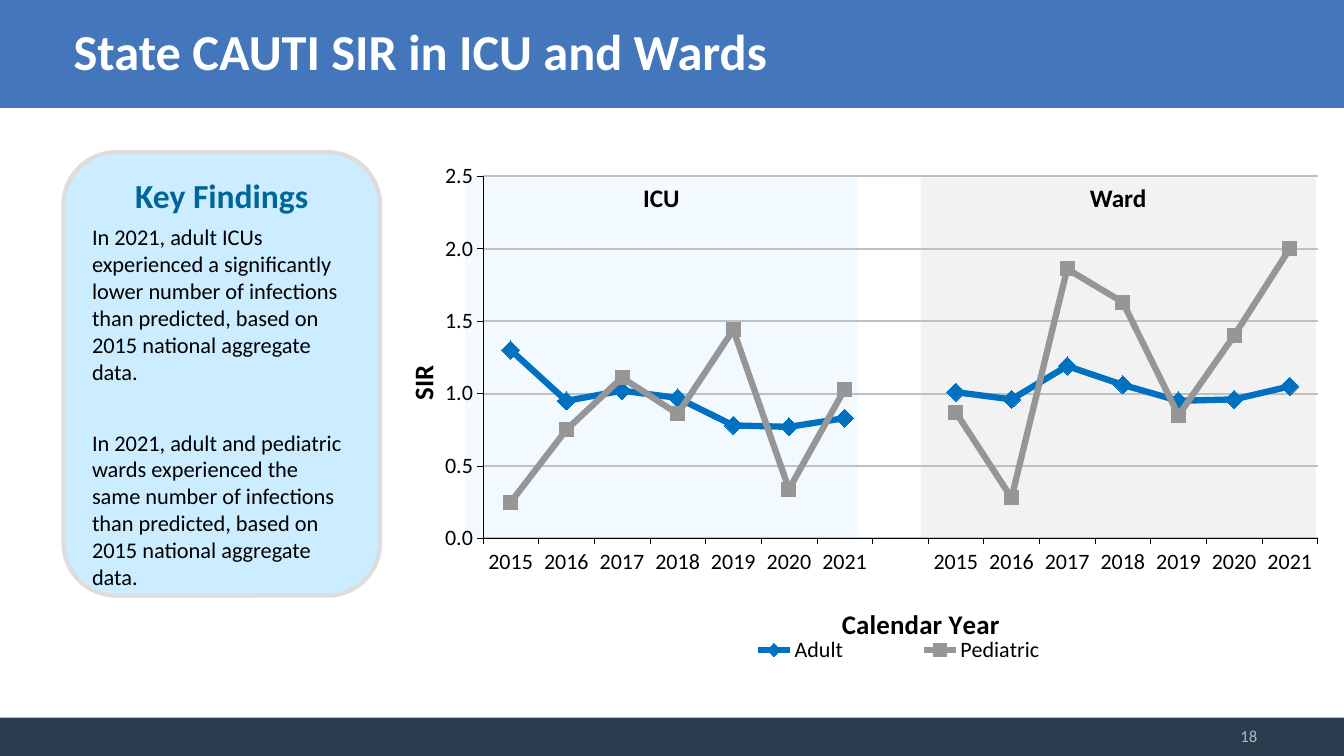
from dataclasses import dataclass
from typing import Any

from lxml import etree
from pptx import Presentation
from pptx.chart.data import CategoryChartData
from pptx.dml.color import RGBColor
from pptx.enum.chart import XL_CHART_TYPE, XL_LEGEND_POSITION, XL_MARKER_STYLE, XL_TICK_MARK
from pptx.enum.shapes import MSO_SHAPE
from pptx.enum.text import MSO_ANCHOR, PP_ALIGN
from pptx.oxml.ns import qn
from pptx.util import Inches, Pt

LINE_MARKERS = XL_CHART_TYPE.LINE_MARKERS
BOTTOM = XL_LEGEND_POSITION.BOTTOM
DIAMOND, SQUARE = XL_MARKER_STYLE.DIAMOND, XL_MARKER_STYLE.SQUARE
OUTSIDE, NO_TICK = XL_TICK_MARK.OUTSIDE, XL_TICK_MARK.NONE
RECTANGLE, ROUNDED = MSO_SHAPE.RECTANGLE, MSO_SHAPE.ROUNDED_RECTANGLE
TOP, MIDDLE = MSO_ANCHOR.TOP, MSO_ANCHOR.MIDDLE
LEFT, CENTER, RIGHT = PP_ALIGN.LEFT, PP_ALIGN.CENTER, PP_ALIGN.RIGHT

FONT = "Calibri"
COLORS = {
    "header": "4376BB", "footer": "2A3C4E", "white": "FFFFFF", "black": "000000",
    "card": "CCECFF", "card_line": "DDDDDD", "heading": "006699", "number": "B5B5B5",
    "ward": "F2F2F2", "icu": "F3FAFF", "grid": "C0C0C0",
    "adult": "0070C0", "pediatric": "969696",
}


@dataclass
class Panel:
    box: tuple[float, float, float, float]
    fill: str
    label: str = ""
    kind: Any = RECTANGLE


@dataclass
class Line:
    text: str
    size: float
    color: str = "black"
    bold: bool = False
    align: Any = LEFT
    spacing: dict[str, Any] | None = None


@dataclass
class Series:
    name: str
    color: str
    marker: Any
    marker_size: int
    values: list[float | None]


BANDS = [Panel((0, 0, 13.33, 1.07), "header"), Panel((0, 7.12, 13.33, 0.38), "footer")]
CARD = Panel((0.63, 1.51, 3.14, 4.4), "card", kind=ROUNDED)
REGIONS = [
    Panel((9.13, 1.76, 3.92, 3.59), "ward", "Ward"),
    Panel((4.61, 1.76, 3.9, 3.59), "icu", "ICU"),
]
AFTER = {"space_after": Pt(6)}
FINDINGS = [
    Line("Key Findings", 24, "heading", True, CENTER, AFTER),
    Line("In 2021, adult ICUs experienced a significantly lower number of infections "
         "than predicted, based on 2015 national aggregate data.", 16, spacing=AFTER),
    Line("In 2021, adult and pediatric wards experienced the same number of infections "
         "than predicted, based on 2015 national aggregate data.", 16,
         spacing={"space_before": Pt(25.5), **AFTER}),
]
YEARS = [str(year) for year in range(2015, 2022)]
SERIES = [
    Series("Adult", "adult", DIAMOND, 13,
           [1.3, 0.95, 1.02, 0.97, 0.78, 0.77, 0.83, None,
            1.01, 0.96, 1.19, 1.06, 0.95, 0.96, 1.05]),
    Series("Pediatric", "pediatric", SQUARE, 10,
           [0.25, 0.75, 1.11, 0.86, 1.44, 0.34, 1.03, None,
            0.87, 0.28, 1.86, 1.63, 0.85, 1.4, 2]),
]


def rgb(name: str) -> RGBColor:
    return RGBColor.from_string(COLORS[name])


def set_all(target: Any, values: dict[str, Any]) -> None:
    for name, value in values.items():
        setattr(target, name, value)


def set_font(font: Any, size: float, color: str = "black", bold: bool = False) -> None:
    set_all(font, {"name": FONT, "size": Pt(size), "bold": bold})
    font.color.rgb = rgb(color)


def set_line(line: Any, color: str, width: float) -> None:
    line.color.rgb = rgb(color)
    line.width = Pt(width)


def write(shape: Any, lines: list[Line], anchor: Any = TOP) -> None:
    frame = shape.text_frame
    set_all(frame, {"word_wrap": True, "vertical_anchor": anchor})
    for index, line in enumerate(lines):
        paragraph = frame.add_paragraph() if index else frame.paragraphs[0]
        set_all(paragraph, {"alignment": line.align, **(line.spacing or {})})
        run = paragraph.add_run()
        run.text = line.text
        set_font(run.font, line.size, line.color, line.bold)


def add_panel(slide: Any, panel: Panel) -> Any:
    shape = slide.shapes.add_shape(panel.kind, *map(Inches, panel.box))
    shape.shadow.inherit = False
    shape.fill.solid()
    shape.fill.fore_color.rgb = rgb(panel.fill)
    shape.line.fill.background()
    if panel.label:
        write(shape, [Line(panel.label, 18, bold=True, align=CENTER)])
    return shape


def place(element: Any, **settings: Any) -> None:
    """Give a chart part a manual layout, in fractions of the chart."""
    layout = element.find(qn("c:layout"))
    if layout is None:
        layout = etree.Element(qn("c:layout"))
        before = [element.find(qn(tag)) for tag in ("c:legendPos", "c:tx")]
        position = next((element.index(item) + 1 for item in before if item is not None), 0)
        element.insert(position, layout)
    for child in list(layout):
        layout.remove(child)
    manual = etree.SubElement(layout, qn("c:manualLayout"))
    for name, value in settings.items():
        etree.SubElement(manual, qn(f"c:{name}")).set("val", str(value))


def format_axis(axis: Any, title: str, x: float, y: float) -> None:
    set_all(axis, {"major_tick_mark": OUTSIDE, "minor_tick_mark": NO_TICK})
    set_font(axis.tick_labels.font, 15.7)
    set_line(axis.format.line, "black", 0.36)
    paragraph = axis.axis_title.text_frame.paragraphs[0]
    run = paragraph.add_run()
    run.text = title
    set_font(run.font, 19.2, bold=True)
    place(axis.axis_title._element, xMode="edge", yMode="edge", x=x, y=y)


def add_sir_chart(slide: Any) -> None:
    data = CategoryChartData(number_format="0.0")
    data.categories = YEARS + [""] + YEARS
    for series in SERIES:
        data.add_series(series.name, series.values)
    box = map(Inches, (3.77, 1.5, 9.44, 5.18))
    chart = slide.shapes.add_chart(LINE_MARKERS, *box, data).chart
    set_all(chart, {"has_title": False, "has_legend": True})
    set_font(chart.font, 19.2, bold=True)

    # Axes
    format_axis(chart.category_axis, "Calendar Year", 0.48, 0.86)
    value_axis = chart.value_axis
    format_axis(value_axis, "SIR", 0.02, 0.4)
    set_all(value_axis, {"minimum_scale": 0, "maximum_scale": 2.5, "major_unit": 0.5})
    set_all(value_axis.tick_labels, {"number_format": "0.0", "number_format_is_linked": False})
    set_line(value_axis.major_gridlines.format.line, "grid", 1.42)

    # Legend and plot area
    set_all(chart.legend, {"position": BOTTOM, "include_in_layout": False})
    set_font(chart.legend.font, 15.7)
    place(chart.legend._element, xMode="edge", yMode="edge", x=0.32, y=0.92, w=0.45, h=0.07)
    plot_area = chart._chartSpace.chart.plotArea
    place(plot_area, layoutTarget="inner", xMode="edge", yMode="edge",
          x=0.108, y=0.048, w=0.877, h=0.694)

    # Series
    plot = chart.plots[0]
    plot.vary_by_categories = False
    for drawn, series in zip(plot.series, SERIES):
        drawn.smooth = False
        set_line(drawn.format.line, series.color, 4.5)
        marker = drawn.marker
        set_all(marker, {"style": series.marker, "size": series.marker_size})
        marker.format.fill.solid()
        marker.format.fill.fore_color.rgb = rgb(series.color)
        set_line(marker.format.line, series.color, 0.75)


def main() -> None:
    presentation = Presentation()
    set_all(presentation, {"slide_width": Inches(13.33), "slide_height": Inches(7.5)})
    slide = presentation.slides.add_slide(presentation.slide_layouts[5])
    for band in BANDS:
        add_panel(slide, band)

    # Title, raised above the header band
    title = slide.shapes.title
    set_all(title, {"left": Inches(0.63), "top": Inches(0.06),
                    "width": Inches(12), "height": Inches(0.96)})
    write(title, [Line("State CAUTI SIR in ICU and Wards", 36, "white", True,
                       spacing={"line_spacing": 0.9})], MIDDLE)
    title._element.getparent().append(title._element)

    # Key findings card
    card = add_panel(slide, CARD)
    set_line(card.line, "card_line", 3)
    set_all(card.text_frame, {"margin_left": Inches(0.13), "margin_right": Inches(0.13),
                              "margin_top": Inches(0.07), "margin_bottom": Inches(0.07)})
    write(card, FINDINGS)

    # Slide number
    number = slide.shapes.add_textbox(*map(Inches, (9.58, 7.1, 2.99, 0.4)))
    write(number, [Line("18", 12, "number", align=RIGHT)], MIDDLE)

    # Shaded regions behind the chart
    for region in REGIONS:
        add_panel(slide, region)
    add_sir_chart(slide)
    presentation.save("out.pptx")


if __name__ == "__main__":
    main()
